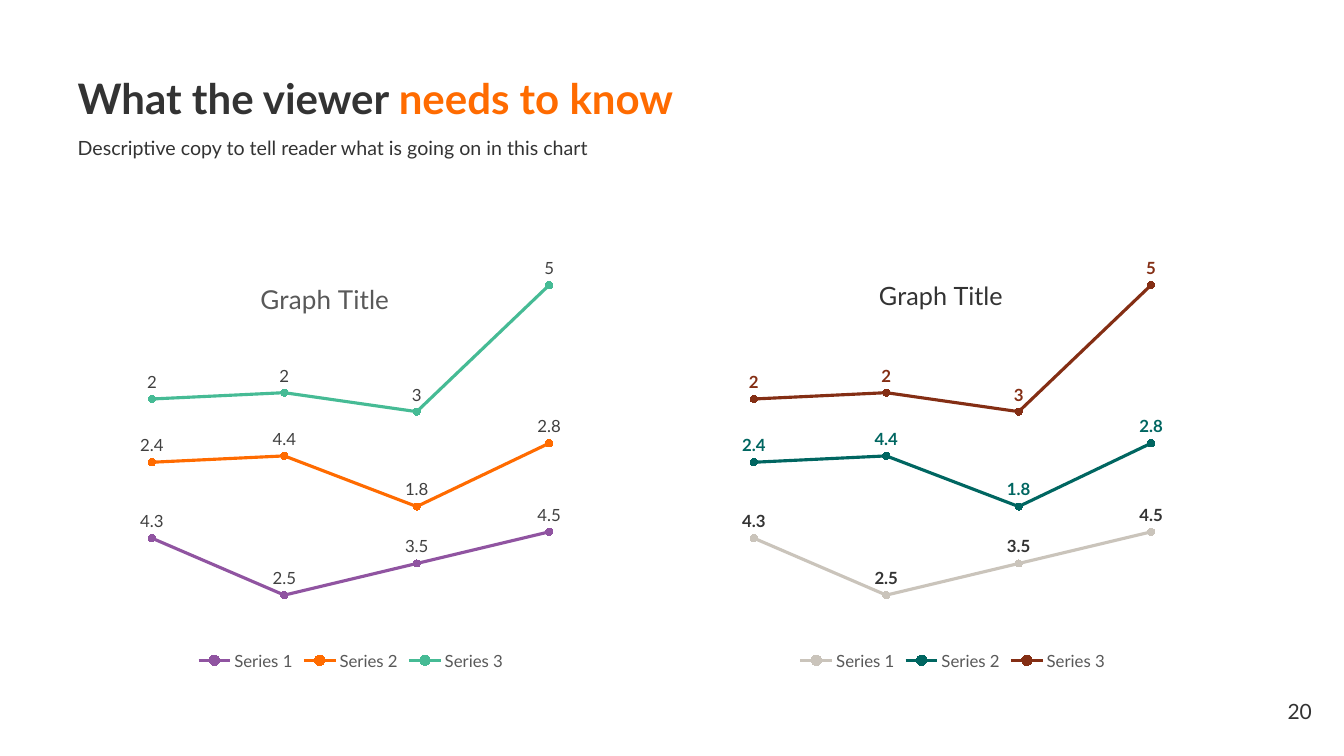
from lxml.etree import SubElement
from pptx import Presentation
from pptx.chart.data import CategoryChartData
from pptx.dml.color import RGBColor
from pptx.enum.chart import XL_CHART_TYPE as ChartType
from pptx.enum.chart import XL_LABEL_POSITION as LabelPosition
from pptx.enum.chart import XL_LEGEND_POSITION as LegendPosition
from pptx.enum.chart import XL_MARKER_STYLE as MarkerStyle
from pptx.enum.text import MSO_ANCHOR as Anchor
from pptx.enum.text import PP_ALIGN as Align
from pptx.oxml import parse_xml
from pptx.oxml.ns import nsdecls, qn
from pptx.util import Inches, Pt

INK = RGBColor(0x33, 0x33, 0x33)
GRAY = RGBColor(0x59, 0x59, 0x59)
LABEL_GRAY = RGBColor(0x40, 0x40, 0x40)
ORANGE = RGBColor(0xFF, 0x6B, 0x00)
PURPLE = RGBColor(0x90, 0x54, 0xA1)
GREEN = RGBColor(0x46, 0xBB, 0x95)
STONE = RGBColor(0xCA, 0xC4, 0xBB)
TEAL = RGBColor(0x00, 0x66, 0x61)
RUST = RGBColor(0x84, 0x2E, 0x14)

TITLE = [("What the viewer ", INK), ("needs to know", ORANGE)]
SUBTITLE = [("Descriptive copy to tell reader what is going on in this chart", INK)]
PAGE_NUMBER = [("20", INK)]
TITLE_BOX = (0.67, 0.56, 9.82, 0.89)
SUBTITLE_BOX = (0.67, 1.32, 7.31, 0.62)
PAGE_NUMBER_BOX = (12.22, 6.88, 0.89, 0.35)

CHART_TITLE = "Graph Title"
CATEGORIES = ["1", "2", "3", "4"]
SERIES = {
    "Series 1": (4.3, 2.5, 3.5, 4.5),
    "Series 2": (2.4, 4.4, 1.8, 2.8),
    "Series 3": (2, 2, 3, 5),
}
PLOT_LAYOUT = {"x": 0.027, "y": 0.145, "w": 0.945, "h": 0.855}
CHARTS = [
    {
        "left": 0.7,
        "title_font": {"size": Pt(18.6), "color": GRAY},
        "title_layout": {"x": 0.33, "y": 0.23},
        "line_colors": (PURPLE, ORANGE, GREEN),
        "label_colors": (LABEL_GRAY, LABEL_GRAY, LABEL_GRAY),
        "label_bold": False,
    },
    {
        "left": 6.67,
        "title_font": {"size": Pt(18), "color": INK},
        "title_layout": {"x": 0.36, "y": 0.225},
        "line_colors": (STONE, TEAL, RUST),
        "label_colors": (INK, TEAL, RUST),
        "label_bold": True,
    },
]


def assign(target, values):
    for name, value in values.items():
        setattr(target, name, value)


def style_font(font, color, **values):
    assign(font, {"name": "Lato", "bold": False, **values})
    font.color.rgb = color


def place(shape, box):
    assign(shape, dict(zip(("left", "top", "width", "height"), map(Inches, box))))


def write(shape, runs, anchor, paragraph_format, **font_values):
    assign(shape.text_frame, {"word_wrap": True, "vertical_anchor": anchor})
    paragraph = shape.text_frame.paragraphs[0]
    assign(paragraph, paragraph_format)
    for text, color in runs:
        run = paragraph.add_run()
        run.text = text
        style_font(run.font, color, **font_values)
    return paragraph


def set_layout(parent, position, fractions, inner=False):
    for old_layout in parent.findall(qn("c:layout")):
        parent.remove(old_layout)
    layout = parse_xml(f"<c:layout {nsdecls('c')}><c:manualLayout/></c:layout>")
    settings = {"layoutTarget": "inner"} if inner else {}
    settings.update(xMode="edge", yMode="edge", **fractions)
    for name, value in settings.items():
        SubElement(layout[0], qn(f"c:{name}")).set("val", str(value))
    parent.insert(position, layout)


def add_line_chart(slide, design):
    data = CategoryChartData()
    data.categories = CATEGORIES
    for name, values in SERIES.items():
        data.add_series(name, values)
    box = map(Inches, (design["left"], 1.55, 5.56, 5.14))
    chart = slide.shapes.add_chart(ChartType.LINE_MARKERS_STACKED, *box, data).chart
    style_font(chart.font, INK, size=Pt(10))

    assign(chart, {"has_title": True, "has_legend": True})
    heading = chart.chart_title.text_frame.paragraphs[0].add_run()
    heading.text = CHART_TITLE
    style_font(heading.font, **design["title_font"])
    set_layout(chart.chart_title._element, 1, design["title_layout"])
    set_layout(chart._chartSpace.chart.plotArea, 0, PLOT_LAYOUT, inner=True)

    assign(chart.legend, {"position": LegendPosition.BOTTOM, "include_in_layout": False})
    style_font(chart.legend.font, GRAY, size=Pt(12))
    for axis in (chart.category_axis, chart.value_axis):
        assign(axis, {"visible": False, "has_major_gridlines": False})
    assign(chart.value_axis, {"minimum_scale": 0, "maximum_scale": 14})

    plot = chart.plots[0]
    plot.vary_by_categories = False
    for series, color, label_color in zip(
        plot.series, design["line_colors"], design["label_colors"]
    ):
        series.smooth = False
        series.format.line.width = Pt(2.25)
        assign(series.marker, {"style": MarkerStyle.CIRCLE, "size": 5})
        marker_format = series.marker.format
        marker_format.fill.solid()
        for paint in (series.format.line, marker_format.fill, marker_format.line):
            color_format = paint.color if paint is not marker_format.fill else paint.fore_color
            color_format.rgb = color
        labels = series.data_labels
        assign(labels, {"show_value": True, "position": LabelPosition.ABOVE})
        style_font(labels.font, label_color, size=Pt(12), bold=design["label_bold"])


def main():
    presentation = Presentation()
    assign(presentation, {"slide_width": Inches(13.33), "slide_height": Inches(7.5)})
    slide = presentation.slides.add_slide(presentation.slide_layouts[1])

    title, subtitle = slide.placeholders
    place(title, TITLE_BOX)
    left_text = {"alignment": Align.LEFT, "line_spacing": 0.9, "space_before": Pt(0)}
    write(title, TITLE, Anchor.MIDDLE, left_text, size=Pt(30), bold=True)

    place(subtitle, SUBTITLE_BOX)
    paragraph = write(subtitle, SUBTITLE, Anchor.TOP, left_text, size=Pt(14))
    properties = paragraph._p.get_or_add_pPr()
    for name in ("marL", "indent"):
        properties.set(name, "0")
    SubElement(properties, qn("a:buNone"))

    for design in CHARTS:
        add_line_chart(slide, design)

    page_number = slide.shapes.add_textbox(*map(Inches, PAGE_NUMBER_BOX))
    write(page_number, PAGE_NUMBER, Anchor.TOP, {"alignment": Align.RIGHT}, size=Pt(15))
    presentation.save("out.pptx")


if __name__ == "__main__":
    main()
